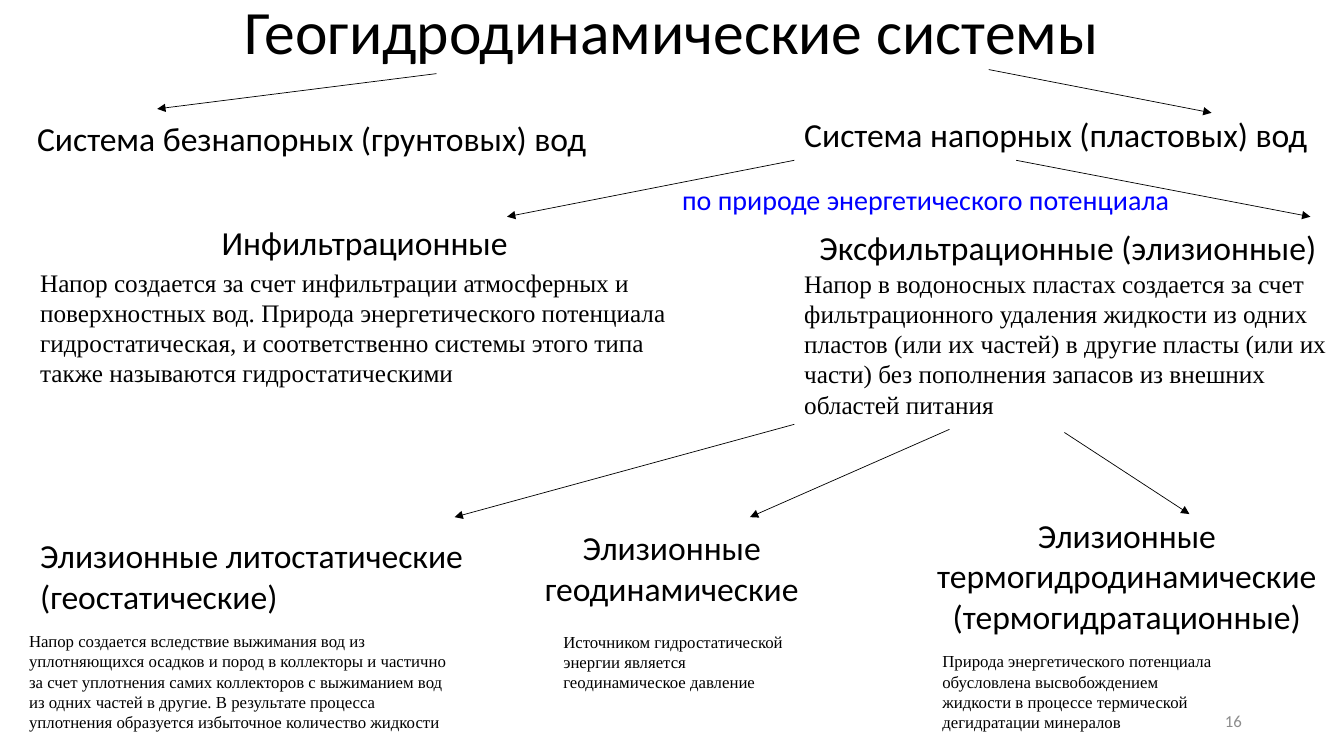
from dataclasses import dataclass

from lxml import etree
from pptx import Presentation
from pptx import util as u
from pptx.dml import color
from pptx.enum import shapes, text
from pptx.oxml import ns


@dataclass(frozen=True)
class Theme:
    heading_font: str = "Calibri"
    body_font: str = "Times New Roman"
    ink: str = "000000"
    accent: str = "0000FF"
    muted: str = "8C8C8C"
    title: int = 44
    heading: int = 24
    subheading: int = 20
    body: int = 18
    small: int = 12
    line: float = 0.5


THEME = Theme()
LEFT, CENTER, RIGHT = text.PP_ALIGN.LEFT, text.PP_ALIGN.CENTER, text.PP_ALIGN.RIGHT
FIT, FIXED = text.MSO_AUTO_SIZE.SHAPE_TO_FIT_TEXT, text.MSO_AUTO_SIZE.NONE

HEADINGS = [
    ((19.4, 80.6, 410.4, 36), "Система безнапорных (грунтовых) вод"),
    ((567.4, 77.8, 377.3, 36), "Система напорных (пластовых) вод"),
    ((151.2, 154.8, 221, 36), "Инфильтрационные"),
    ((578.2, 158.4, 373, 36), "Эксфильтрационные (элизионные)"),
    ((21.6, 378.7, 319.7, 65.5), "Элизионные литостатические\n(геостатические)"),
]
CENTERED_HEADINGS = [
    ((370.8, 373, 218.2, 65.5), "Элизионные геодинамические"),
    ((637.2, 364.3, 335.5, 94.3),
     "Элизионные термогидродинамические\n(термогидратационные)"),
]
SYSTEM_NOTES = [
    ((21.6, 187.2, 480.2, 94.3),
     "Напор создается за счет инфильтрации атмосферных и поверхностных вод. "
     "Природа энергетического потенциала гидростатическая, и соответственно "
     "системы этого типа также называются гидростатическими"),
    ((567.4, 187.9, 405.4, 116.6),
     "Напор в водоносных пластах создается за счет фильтрационного удаления "
     "жидкости из одних пластов (или их частей) в другие пласты (или их части) "
     "без пополнения запасов из внешних областей питания"),
]
ELISION_NOTES = [
    ((13.7, 447.1, 319.7, 79.9),
     "Напор создается вследствие выжимания вод из уплотняющихся осадков и пород "
     "в коллекторы и частично за счет уплотнения самих коллекторов с выжиманием "
     "вод из одних частей в другие. В результате процесса уплотнения образуется "
     "избыточное количество жидкости"),
    ((395.3, 447.8, 179.3, 51.1),
     "Источником гидростатической энергии является геодинамическое давление"),
    ((666, 461.5, 207.4, 65.5),
     "Природа энергетического потенциала обусловлена высвобождением жидкости "
     "в процессе термической дегидратации минералов"),
]
ARROWS = [
    (311.8, 52.6, 112.3, 77.8),
    (706.3, 49.7, 865.4, 80.6),
    (567.4, 114.5, 362.2, 154.8),
    (725.8, 114.5, 936, 154.8),
    (567.4, 303.1, 324.7, 369.4),
    (678.2, 306.7, 535.7, 369.4),
    (760.3, 308.9, 849.6, 367.2),
]


def apply_format(target, values):
    for name, value in values.items():
        setattr(target, name, value)


def add_label(slide, box, content, size, font=THEME.heading_font, ink=THEME.ink,
              align=LEFT, wrap=True, fit=FIT, anchor=text.MSO_ANCHOR.TOP, spacing=None):
    shape = slide.shapes.add_textbox(*map(u.Pt, box))
    frame = shape.text_frame
    frame.text = content
    apply_format(frame, {"word_wrap": wrap, "auto_size": fit, "vertical_anchor": anchor})
    for paragraph in frame.paragraphs:
        apply_format(paragraph, {"alignment": align, "line_spacing": spacing})
        apply_format(paragraph.font, {"name": font, "size": u.Pt(size)})
        paragraph.font.color.rgb = color.RGBColor.from_string(ink)


def add_arrow(slide, ends):
    connector = slide.shapes.add_connector(
        shapes.MSO_CONNECTOR.STRAIGHT, *map(u.Pt, ends))
    connector.line.width = u.Pt(THEME.line)
    connector.line.color.rgb = color.RGBColor.from_string(THEME.ink)
    outline = connector.line._get_or_add_ln()
    etree.SubElement(outline, ns.qn("a:tailEnd"), type="triangle")
    etree.SubElement(connector._element.spPr, ns.qn("a:effectLst"))


def main():
    presentation = Presentation()
    apply_format(presentation, {"slide_width": u.Pt(960), "slide_height": u.Pt(540)})
    slide = presentation.slides.add_slide(presentation.slide_layouts[6])

    add_label(slide, (678.2, 500.4, 216, 28.8), "16", THEME.small, ink=THEME.muted,
              align=RIGHT, fit=FIXED, anchor=text.MSO_ANCHOR.MIDDLE)
    add_label(slide, (0, 4.3, 960, 49), "Геогидродинамические системы", THEME.title,
              align=CENTER, fit=FIXED, spacing=u.Pt(40))
    for ends in ARROWS:
        add_arrow(slide, ends)
    for box, content in HEADINGS:
        add_label(slide, box, content, THEME.heading, wrap=False)
    add_label(slide, (480.2, 126.7, 378, 31.7), "по природе энергетического потенциала",
              THEME.subheading, ink=THEME.accent, wrap=False)
    for box, content in CENTERED_HEADINGS:
        add_label(slide, box, content, THEME.heading, align=CENTER)
    for notes, size in ((SYSTEM_NOTES, THEME.body), (ELISION_NOTES, THEME.small)):
        for box, content in notes:
            add_label(slide, box, content, size, font=THEME.body_font)

    presentation.save("out.pptx")


if __name__ == "__main__":
    main()
